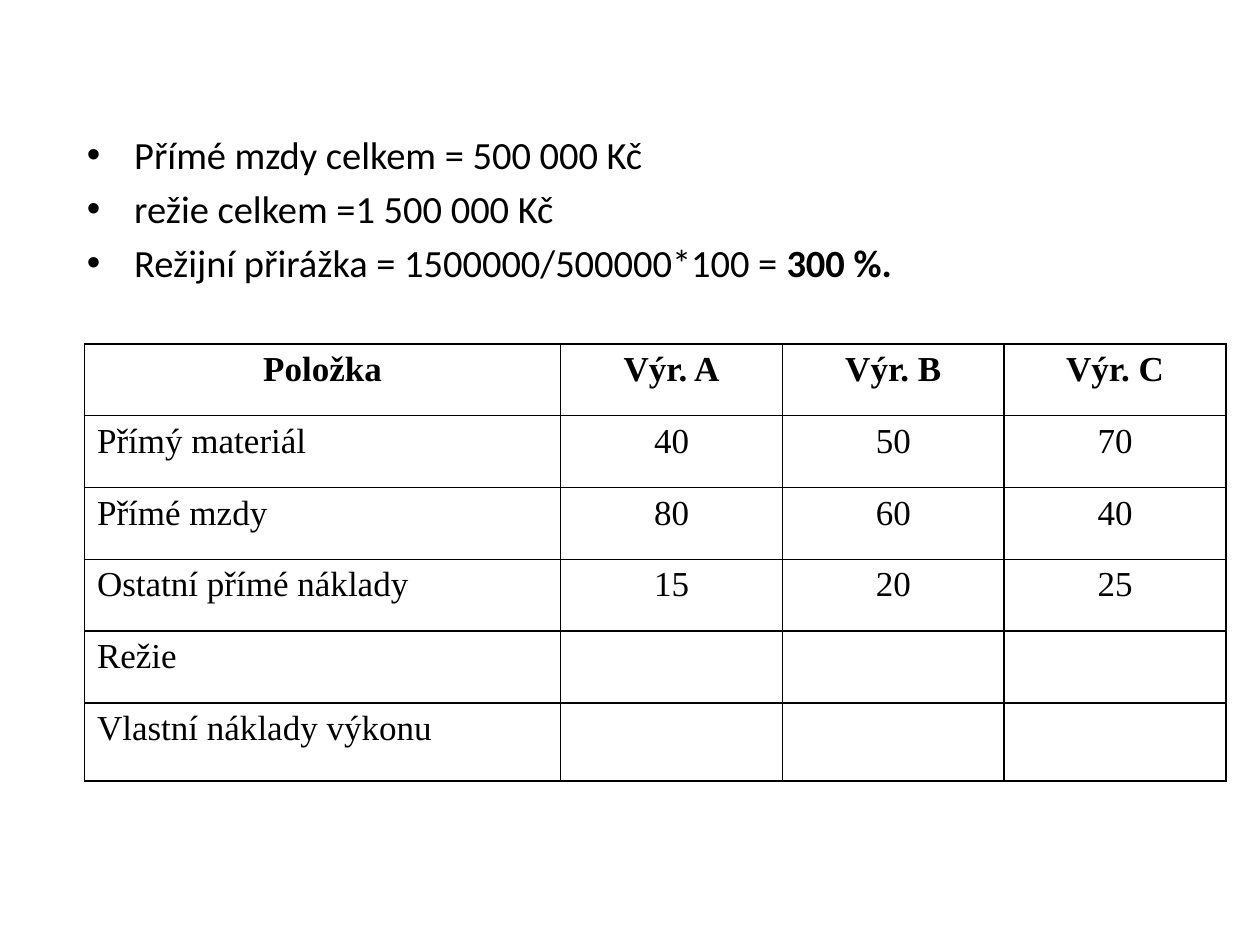
from lxml import etree
from pptx import Presentation
from pptx import util as u
from pptx.dml.color import RGBColor
from pptx.enum import text
from pptx.oxml import ns

BLACK = "000000"
ALIGN = text.PP_ALIGN


def color(value):
    return RGBColor.from_string(value)


def add_text(paragraph, content, font="Calibri", size=22, bold=False, fill=BLACK):
    run = paragraph.add_run()
    run.text = content
    run.font.name = font
    run.font.size = u.Pt(size)
    run.font.bold = bold
    run.font.color.rgb = color(fill)


class CostSlide:
    table_font = "Times New Roman"
    table_size = 20
    border_width = u.Pt(1)

    def __init__(self, deck):
        self.slide = deck.slides.add_slide(deck.slide_layouts[1])
        title = self.slide.shapes.title
        title.element.getparent().remove(title.element)

    def bullets(self, items, left, top, width, height):
        body = self.slide.placeholders[1]
        body.left, body.top = u.Inches(left), u.Inches(top)
        body.width, body.height = u.Inches(width), u.Inches(height)
        frame = body.text_frame
        for index, parts in enumerate(items):
            paragraph = frame.add_paragraph() if index else frame.paragraphs[0]
            if index == 0:
                paragraph.space_before = u.Pt(0)
            for content, bold in parts:
                add_text(paragraph, content, bold=bold)

    def borders(self, cell):
        properties = cell._tc.get_or_add_tcPr()
        for side in ("lnL", "lnR", "lnT", "lnB"):
            line = etree.SubElement(properties, ns.qn(f"a:{side}"), w=str(self.border_width))
            solid = etree.SubElement(line, ns.qn("a:solidFill"))
            etree.SubElement(solid, ns.qn("a:srgbClr"), val=BLACK)

    def table(self, rows, left, top, widths, heights):
        frame = self.slide.shapes.add_table(
            len(rows), len(widths), u.Inches(left), u.Inches(top),
            u.Inches(sum(widths)), u.Inches(sum(heights)))
        table = frame.table
        table.first_row = table.horz_banding = False
        for column, width in zip(table.columns, widths):
            column.width = u.Inches(width)
        for row, height in zip(table.rows, heights):
            row.height = u.Inches(height)
        for r, values in enumerate(rows):
            for c, value in enumerate(values):
                cell = table.cell(r, c)
                self.borders(cell)
                cell.fill.background()
                if value:
                    paragraph = cell.text_frame.paragraphs[0]
                    paragraph.alignment = ALIGN.JUSTIFY if r and c == 0 else ALIGN.CENTER
                    add_text(paragraph, value, self.table_font, self.table_size, bold=r == 0)


def main():
    deck = Presentation()
    deck.slide_width, deck.slide_height = u.Inches(10), u.Inches(7.5)
    slide = CostSlide(deck)
    overhead = [
        [("Přímé mzdy celkem = 500 000 Kč", False)],
        [("režie celkem =1 500 000 Kč", False)],
        [("Režijní přirážka = 1500000/500000*100 = ", False), ("300 %.", True)],
    ]
    costs = [
        ("Položka", "Výr. A", "Výr. B", "Výr. C"),
        ("Přímý materiál", "40", "50", "70"),
        ("Přímé mzdy", "80", "60", "40"),
        ("Ostatní přímé náklady", "15", "20", "25"),
        ("Režie", "", "", ""),
        ("Vlastní náklady výkonu", "", "", ""),
    ]
    slide.bullets(overhead, 0.59, 0.99, 8.9, 1.65)
    slide.table(costs, 0.67, 2.73, [3.78] + [1.76] * 3, [0.57] * 5 + [0.62])
    deck.save("out.pptx")


if __name__ == "__main__":
    main()
